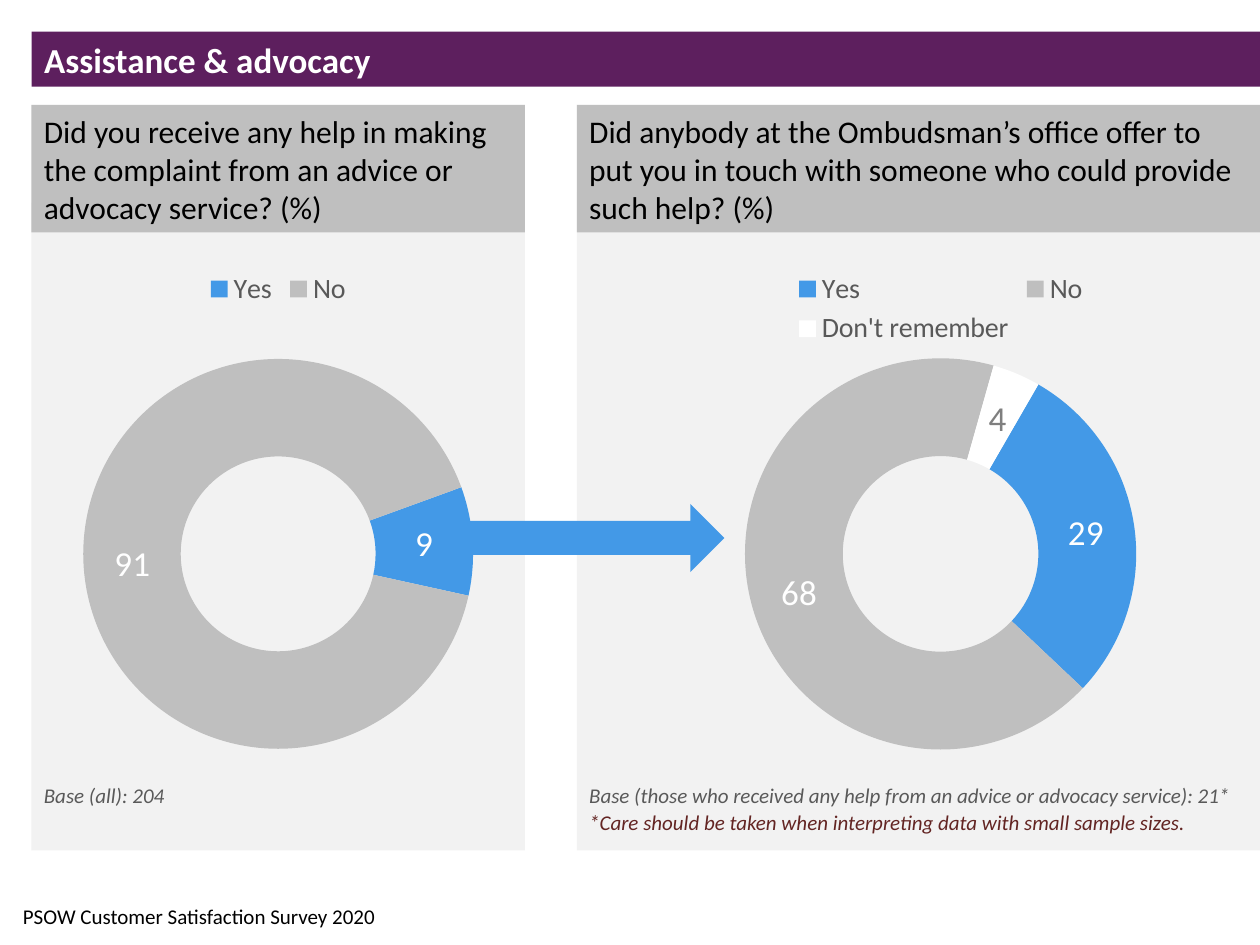
from dataclasses import dataclass

from pptx import Presentation
from pptx.chart.data import CategoryChartData
from pptx.dml.color import RGBColor
from pptx.enum.chart import XL_CHART_TYPE, XL_LEGEND_POSITION
from pptx.enum.shapes import MSO_SHAPE
from pptx.enum.text import MSO_ANCHOR, MSO_AUTO_SIZE, PP_ALIGN
from pptx.oxml import parse_xml
from pptx.oxml.ns import nsdecls
from pptx.util import Pt

DOUGHNUT = XL_CHART_TYPE.DOUGHNUT
LEGEND_TOP = XL_LEGEND_POSITION.TOP
RECTANGLE, RIGHT_ARROW = MSO_SHAPE.RECTANGLE, MSO_SHAPE.RIGHT_ARROW
LEFT, MIDDLE, TOP = PP_ALIGN.LEFT, MSO_ANCHOR.MIDDLE, MSO_ANCHOR.TOP
NO_AUTOFIT = MSO_AUTO_SIZE.NONE
TITLE_ONLY = 5


@dataclass(frozen=True)
class Theme:
    font: str = "Calibri"
    purple: str = "5D1F5E"
    blue: str = "4399E7"
    silver: str = "BFBFBF"
    pale: str = "F2F2F2"
    white: str = "FFFFFF"
    black: str = "000000"
    slate: str = "595959"
    label_grey: str = "7F7F7F"
    maroon: str = "632523"
    title_size: int = 20
    question_size: int = 18
    legend_size: int = 16
    label_size: int = 20
    note_size: int = 12


@dataclass(frozen=True)
class Area:
    left: float
    top: float
    width: float
    height: float

    def points(self):
        return Pt(self.left), Pt(self.top), Pt(self.width), Pt(self.height)


@dataclass(frozen=True)
class Panel:
    question: str
    left: float
    width: float
    body_top: float
    chart_area: Area
    start_angle: int
    answers: dict
    notes: tuple


THEME = Theme()
HEADER_TOP, HEADER_HEIGHT, PANEL_BOTTOM = 60, 72.8, 486
NOTE_TOP, NOTE_STEP, NOTE_HEIGHT = 443.5, 15.8, 21.8
SLICE_COLOURS = (THEME.blue, THEME.silver, THEME.white)

PANELS = (
    Panel(
        "Did you receive any help in making the complaint from an advice or "
        "advocacy service? (%)",
        18, 282, 116, Area(18, 147, 282, 302), 70,
        {"Yes": 9, "No": 91},
        (("Base (all): 204", THEME.slate),),
    ),
    Panel(
        "Did anybody at the Ombudsman’s office offer to put you in touch with "
        "someone who could provide such help? (%)",
        329.6, 391, 109.5, Area(396, 147, 283, 302), 30,
        {"Yes": 29, "No": 68, "Don't remember": 4},
        (
            ("Base (those who received any help from an advice or advocacy "
             "service): 21*", THEME.slate),
            ("*Care should be taken when interpreting data with small sample "
             "sizes.", THEME.maroon),
        ),
    ),
)


def style_font(font, size: float, colour: str, bold=False, italic=False):
    font.name, font.size = THEME.font, Pt(size)
    font.bold, font.italic = bold, italic
    font.color.rgb = RGBColor.from_string(colour)


def write_text(box, text: str, *, size: float, colour: str, bold=False,
               italic=False, anchor=MIDDLE):
    frame = box.text_frame
    frame.word_wrap = True
    frame.auto_size = NO_AUTOFIT
    frame.vertical_anchor = anchor
    para = frame.paragraphs[0]
    para.alignment = LEFT
    span = para.add_run()
    span.text = text
    style_font(span.font, size, colour, bold, italic)


def paint(target, colour: str):
    target.fill.solid()
    target.fill.fore_color.rgb = RGBColor.from_string(colour)
    target.line.fill.background()


def add_block(page, kind, area: Area, colour: str):
    block = page.shapes.add_shape(kind, *area.points())
    block.shadow.inherit = False
    paint(block, colour)
    return block


def add_note(page, area: Area, text: str, colour: str, italic: bool):
    box = page.shapes.add_textbox(*area.points())
    write_text(box, text, size=THEME.note_size, colour=colour, italic=italic,
               anchor=TOP)


def add_doughnut(page, panel: Panel):
    data = CategoryChartData()
    data.categories = list(panel.answers)
    data.add_series("Series 1", list(panel.answers.values()))
    chart = page.shapes.add_chart(
        DOUGHNUT, *panel.chart_area.points(), data).chart
    style_font(chart.font, 10, THEME.black)
    chart.has_title = False
    chart.has_legend = True
    chart.legend.position = LEGEND_TOP
    chart.legend.include_in_layout = False
    style_font(chart.legend.font, THEME.legend_size, THEME.slate)

    # Slices and their values
    series = chart.plots[0].series[0]
    labels = series.data_labels
    labels.show_value = True
    labels.show_percentage = False
    style_font(labels.font, THEME.label_size, THEME.white)
    for index, colour in zip(range(len(panel.answers)), SLICE_COLOURS):
        point = series.points[index]
        paint(point.format, colour)
        if colour == THEME.white:
            style_font(point.data_label.font, THEME.label_size,
                       THEME.label_grey)

    # Rotation, hole and plot position
    space = chart.element
    space.xpath(".//c:firstSliceAng")[0].set("val", str(panel.start_angle))
    space.xpath(".//c:holeSize")[0].set("val", "50")
    plot_area = space.xpath(".//c:plotArea")[0]
    for old_layout in plot_area.xpath("./c:layout"):
        plot_area.remove(old_layout)
    places = "".join(
        f'<c:{name} val="{value}"/>' for name, value in (
            ("layoutTarget", "inner"), ("xMode", "edge"), ("yMode", "edge"),
            ("x", 0.105), ("y", 0.176), ("w", 0.79), ("h", 0.771)))
    plot_area.insert(0, parse_xml(
        f'<c:layout {nsdecls("c")}><c:manualLayout>{places}'
        '</c:manualLayout></c:layout>'))


def add_panel(page, panel: Panel):
    body = Area(panel.left, panel.body_top, panel.width,
                PANEL_BOTTOM - panel.body_top)
    add_block(page, RECTANGLE, body, THEME.pale)
    header = add_block(
        page, RECTANGLE,
        Area(panel.left, HEADER_TOP, panel.width, HEADER_HEIGHT), THEME.silver)
    write_text(header, panel.question, size=THEME.question_size,
               colour=THEME.black)
    add_doughnut(page, panel)
    for row, (text, colour) in enumerate(panel.notes):
        area = Area(panel.left, NOTE_TOP + row * NOTE_STEP, panel.width,
                    NOTE_HEIGHT)
        add_note(page, area, text, colour, italic=True)


def main():
    deck = Presentation()
    deck.slide_width, deck.slide_height = Pt(720), Pt(540)
    page = deck.slides.add_slide(deck.slide_layouts[TITLE_ONLY])

    # Title band
    title = page.shapes.title
    title.left, title.top, title.width, title.height = Area(
        18, 18, 702, 31.5).points()
    paint(title, THEME.purple)
    write_text(title, "Assistance & advocacy", size=THEME.title_size,
               colour=THEME.white, bold=True)

    # Question panels, linked by the arrow
    for panel in PANELS:
        add_panel(page, panel)
    add_block(page, RIGHT_ARROW, Area(258.5, 288, 155.5, 38.9), THEME.blue)

    # Footer
    add_note(page, Area(6, 512.5, 378, 22),
             "PSOW Customer Satisfaction Survey 2020", THEME.black,
             italic=False)
    deck.save("out.pptx")


if __name__ == "__main__":
    main()
